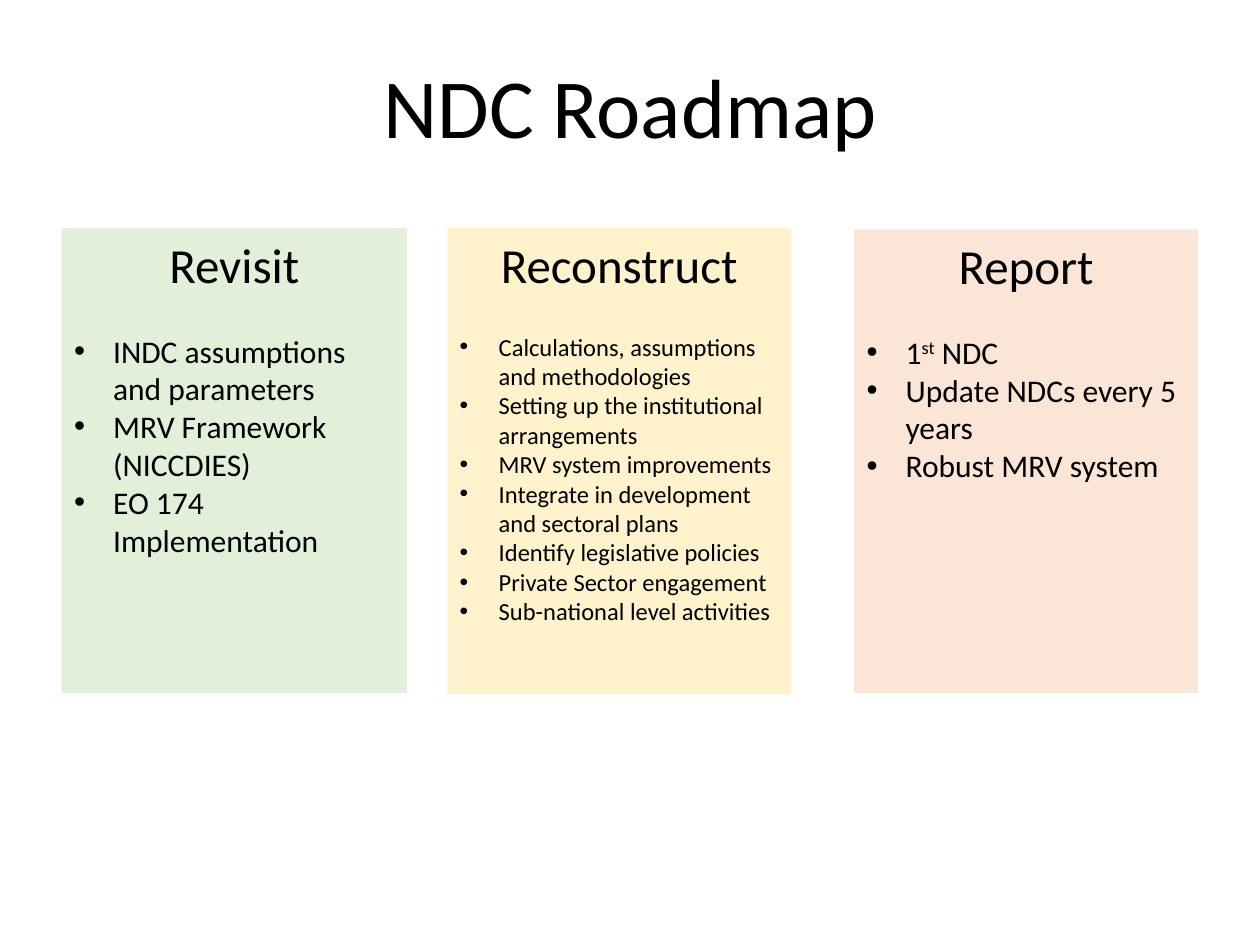
from lxml.etree import SubElement
from pptx import Presentation
from pptx.dml.color import RGBColor
from pptx.enum.shapes import MSO_SHAPE
from pptx.enum.text import MSO_ANCHOR, PP_ALIGN
from pptx.oxml.ns import qn
from pptx.util import Inches, Pt

TITLE = "NDC Roadmap"
SUPERSCRIPT = "st"
STAGES = [
    ("Revisit", "E2F0D9", (0.49, 1.81, 2.74, 3.69), 18, [
        ["INDC assumptions and parameters"],
        ["MRV Framework (NICCDIES)"],
        ["EO 174 Implementation"],
    ]),
    ("Reconstruct", "FFF2CC", (3.55, 1.81, 2.73, 3.7), 14, [
        ["Calculations, assumptions and methodologies"],
        ["Setting up the institutional arrangements"],
        ["MRV system improvements"],
        ["Integrate in development and sectoral plans"],
        ["Identify legislative policies"],
        ["Private Sector engagement"],
        ["Sub-national level activities"],
    ]),
    ("Report", "FBE5D6", (6.78, 1.82, 2.73, 3.68), 18, [
        ["1", SUPERSCRIPT, " NDC"],
        ["Update NDCs every 5 years"],
        ["Robust MRV system"],
    ]),
]


def color(value):
    return RGBColor.from_string(value)


def style(paragraph, size, align):
    paragraph.alignment = align
    paragraph.font.name = "Calibri"
    paragraph.font.size = Pt(size)
    paragraph.font.color.rgb = color("000000")


def add_bullet(frame, parts, size):
    paragraph = frame.add_paragraph()
    properties = paragraph._p.get_or_add_pPr()
    properties.set("marL", str(Inches(0.31)))
    properties.set("indent", str(-Inches(0.31)))
    SubElement(properties, qn("a:buFont"), typeface="Arial")
    SubElement(properties, qn("a:buChar"), char="•")
    style(paragraph, size, PP_ALIGN.LEFT)
    for part in parts:
        run = paragraph.add_run()
        run.text = part
        if part == SUPERSCRIPT:
            run._r.get_or_add_rPr().set("baseline", "30000")


def add_stage(slide, heading, fill, box, size, points):
    panel = slide.shapes.add_shape(MSO_SHAPE.RECTANGLE, *map(Inches, box))
    panel.shadow.inherit = False
    panel.fill.solid()
    panel.fill.fore_color.rgb = color(fill)
    panel.line.fill.background()
    frame = panel.text_frame
    frame.word_wrap = True
    frame.vertical_anchor = MSO_ANCHOR.TOP
    top = frame.paragraphs[0]
    top.text = heading
    top.space_after = Pt(22)
    style(top, 28, PP_ALIGN.CENTER)
    for parts in points:
        add_bullet(frame, parts, size)


def main():
    deck = Presentation()
    deck.slide_width, deck.slide_height = Inches(10), Inches(7.5)
    slide = deck.slides.add_slide(deck.slide_layouts[6])
    title_frame = slide.shapes.add_textbox(
        Inches(0.69), Inches(0.4), Inches(8.62), Inches(0.96)).text_frame
    title_frame.word_wrap = True
    title_frame.vertical_anchor = MSO_ANCHOR.MIDDLE
    title = title_frame.paragraphs[0]
    title.text = TITLE
    title.line_spacing = 0.9
    style(title, 48, PP_ALIGN.CENTER)
    for stage in STAGES:
        add_stage(slide, *stage)
    deck.save("out.pptx")


if __name__ == "__main__":
    main()
